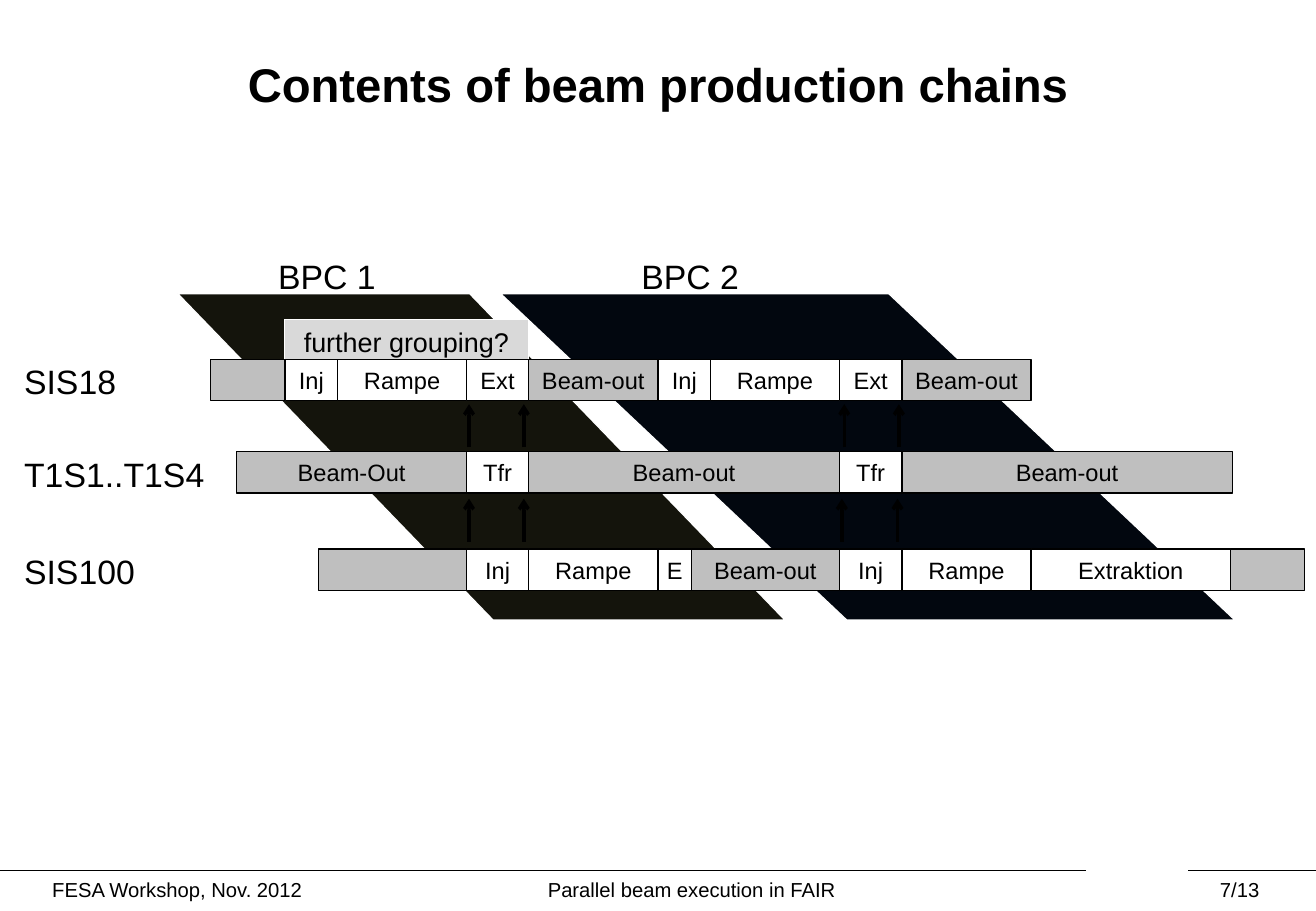
from dataclasses import dataclass
from itertools import pairwise

from lxml.etree import SubElement
from pptx import Presentation
from pptx.dml.color import RGBColor as RGB
from pptx.enum.shapes import MSO_CONNECTOR as Link, MSO_SHAPE as Form
from pptx.enum.text import MSO_ANCHOR as Anchor, PP_ALIGN as Align
from pptx.oxml.ns import qn
from pptx.util import Pt


@dataclass(frozen=True)
class Theme:
    font: str = "Arial"
    ink: str = "000000"
    paper: str = "FFFFFF"
    idle: str = "BFBFBF"
    note: str = "D9D9D9"
    chain_1: str = "14140C"
    chain_2: str = "02070F"
    title: int = 28
    label: int = 20
    remark: int = 16
    phase: int = 14
    footer: int = 12
    thin: float = 0.75
    thick: float = 2


class Timeline:
    def __init__(self, slide, theme):
        self.shapes = slide.shapes
        self.theme = theme

    def letter(self, holder, words, size, align=Align.CENTER, bold=False, wrap=True):
        """Put one styled line of text into a shape or text box."""
        frame = holder.text_frame
        frame.word_wrap = wrap
        frame.vertical_anchor = Anchor.MIDDLE
        line = frame.paragraphs[0]
        line.text = words
        line.alignment = align
        style = {"name": self.theme.font, "size": Pt(size), "bold": bold}
        for key, value in style.items():
            setattr(line.font, key, value)
        line.font.color.rgb = RGB.from_string(self.theme.ink)

    def text(self, words, x, y, width, height, size, **options):
        box = self.shapes.add_textbox(Pt(x), Pt(y), Pt(width), Pt(height))
        self.letter(box, words, size, **options)

    def paint(self, shape, fill, outline):
        shape.shadow.inherit = False
        shape.fill.solid()
        shape.fill.fore_color.rgb = RGB.from_string(fill)
        shape.line.color.rgb = RGB.from_string(outline)
        shape.line.width = Pt(self.theme.thin)

    def block(self, words, x, y, width, height, fill, outline, size):
        box = self.shapes.add_shape(Form.RECTANGLE, Pt(x), Pt(y), Pt(width), Pt(height))
        self.paint(box, fill, outline)
        if words:
            self.letter(box, words, size, wrap=False)

    def chain(self, x, y, width, height, slant, fill):
        """Draw a band that leans from top left to bottom right."""
        band = self.shapes.add_shape(Form.PARALLELOGRAM, Pt(x), Pt(y), Pt(width), Pt(height))
        band.adjustments[0] = slant / height
        band.element.spPr.find(qn("a:xfrm")).set("flipH", "1")
        self.paint(band, fill, self.theme.paper)

    def rule(self, x1, y1, x2, y2, weight, arrow=False):
        stroke = self.shapes.add_connector(Link.STRAIGHT, Pt(x1), Pt(y1), Pt(x2), Pt(y2))
        stroke.line.color.rgb = RGB.from_string(self.theme.ink)
        stroke.line.width = Pt(weight)
        properties = stroke.element.spPr
        if arrow:
            SubElement(properties.find(qn("a:ln")), qn("a:tailEnd"), type="arrow")
        SubElement(properties, qn("a:effectLst"))


def main():
    theme = Theme()
    deck = Presentation()
    deck.slide_width, deck.slide_height = Pt(780), Pt(540)
    page = Timeline(deck.slides.add_slide(deck.slide_layouts[6]), theme)

    footer_y = 516.2
    page.rule(0, footer_y, 643.7, footer_y, theme.thin)
    page.rule(704.2, footer_y, 780, footer_y, theme.thin)
    for words, x, width in (
        ("FESA Workshop, Nov. 2012", 1.4, 207.4),
        ("Parallel beam execution in FAIR", 290.9, 238.3),
        ("7/13", 698.4, 72.7),
    ):
        page.text(words, x, footer_y, width, 21.6, theme.footer)
    page.text("Contents of beam production chains", 0, 5.8, 780, 87.1, theme.title, bold=True)

    chain_y, chain_height = 174.2, 193.3
    page.chain(105.5, chain_y, 359.7, chain_height, 186.7, theme.chain_1)
    page.chain(296.9, chain_y, 435, chain_height, 205, theme.chain_2)
    page.block("further grouping?", 168.5, 189.4, 144.7, 26.6, theme.note, theme.paper, theme.remark)

    # Edges shared by the machines: both transfers and the ramps after them
    transfer_1, after_1, ramp_1 = 276.5, 313.4, 390
    transfer_2, after_2, ramp_2 = 497.5, 534.6, 611.2
    machines = (
        ("SIS18", 213.1,
         (124.8, 169, 200.2, transfer_1, after_1, ramp_1, 421.2, transfer_2, after_2, ramp_2),
         ("", "Inj", "Rampe", "Ext", "Beam-out", "Inj", "Rampe", "Ext", "Beam-out")),
        ("T1S1..T1S4", 267.8,
         (140.4, transfer_1, after_1, transfer_2, after_2, 730.4),
         ("Beam-Out", "Tfr", "Beam-out", "Tfr", "Beam-out")),
        ("SIS100", 325.4,
         (188.6, transfer_1, after_1, ramp_1, 409.8, transfer_2, after_2, ramp_2, 729.4, 773.3),
         ("", "Inj", "Rampe", "E", "Beam-out", "Inj", "Rampe", "Extraktion", "")),
    )
    for machine, y, edges, phases in machines:
        page.text(machine, 7.2, y - 2.9, 130.3, 31.7, theme.label, align=Align.LEFT)
        for phase, (left, right) in zip(phases, pairwise(edges)):
            idle = phase.lower() in ("", "beam-out")
            page.block(phase, left, y, right - left, 24.5,
                       theme.idle if idle else theme.paper, theme.ink, theme.phase)

    for arrow_y, arrow_xs in (
        (265, (278, 310.5, 500.4, 532.8)),
        (321, (278, 310.5, 499, 532)),
    ):
        for x in arrow_xs:
            page.rule(x, arrow_y, x, arrow_y - 25.4, theme.thick, arrow=True)

    for words, x in (("BPC 1", 157.7), ("BPC 2", 373)):
        page.text(words, x, 148, 130.3, 31.7, theme.label, align=Align.LEFT)

    deck.save("out.pptx")


if __name__ == "__main__":
    main()
